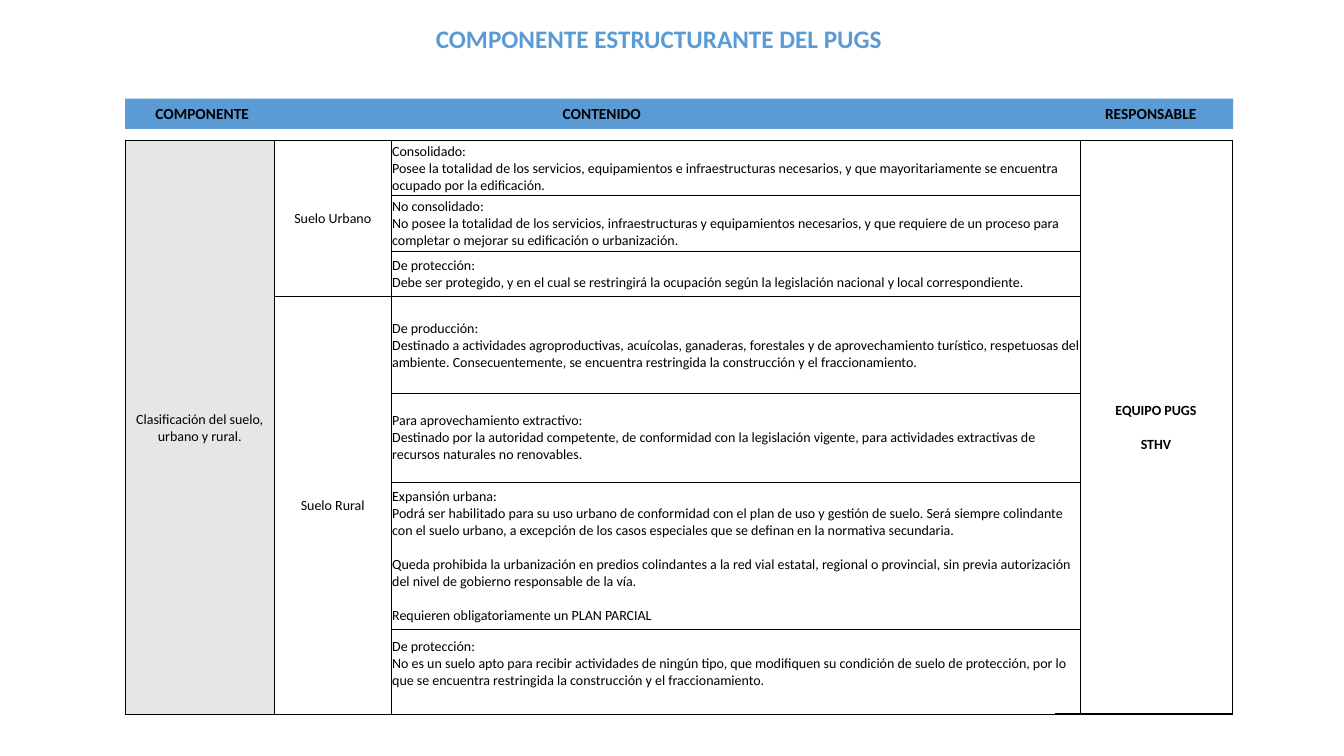
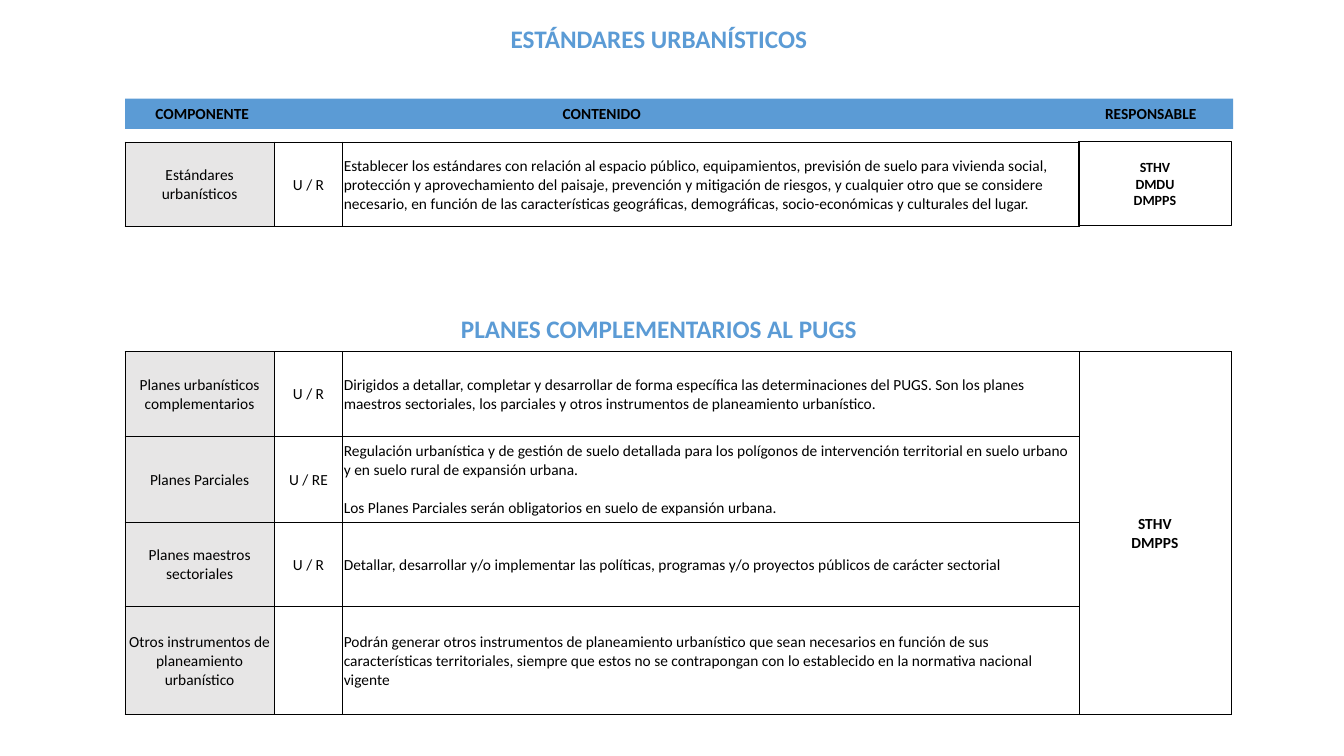
"""Builds two slides that set out the components of a land use plan."""
from lxml import etree
from pptx import Presentation
from pptx.dml.color import RGBColor
from pptx.enum.shapes import MSO_CONNECTOR, MSO_SHAPE
from pptx.enum.text import MSO_ANCHOR, PP_ALIGN
from pptx.oxml.ns import qn
from pptx.util import Inches, Pt

COLORS = {"blue": "5B9BD5", "grey": "E7E6E6", "black": "000000"}
FONT = "Calibri"
LEFT = 1.24
WIDTH = 10.99
LINE_HEIGHT = 1.22
HEADINGS = ("COMPONENTE", "CONTENIDO", "RESPONSABLE")
HEADING_TABS = (4.04, 9.42)
TEXT_COLUMN = 2
TEAM_COLUMN = 3

LAND_COLUMNS = (1.48, 1.16, 6.83, 1.51)
LAND_HEIGHTS = (0.55, 0.55, 0.45, 0.96, 0.88, 1.46, 0.85)
LAND_MERGES = ((0, 0, 6), (0, 1, 2), (3, 1, 6), (0, 3, 6))
LAND_ROWS = (
    ("Clasificación del suelo, urbano y rural.", "Suelo Urbano",
     "Consolidado:\nPosee la totalidad de los servicios, equipamientos e "
     "infraestructuras necesarios, y que mayoritariamente se encuentra "
     "ocupado por la edificación.", "EQUIPO PUGS\n\nSTHV"),
    ("", "",
     "No consolidado:\nNo posee la totalidad de los servicios, "
     "infraestructuras y equipamientos necesarios, y que requiere de un "
     "proceso para completar o mejorar su edificación o urbanización.", ""),
    ("", "",
     "De protección:\nDebe ser protegido, y en el cual se restringirá la "
     "ocupación según la legislación nacional y local correspondiente.", ""),
    ("", "Suelo Rural",
     "De producción:\nDestinado a actividades agroproductivas, acuícolas, "
     "ganaderas, forestales y de aprovechamiento turístico, respetuosas del "
     "ambiente. Consecuentemente, se encuentra restringida la construcción y "
     "el fraccionamiento.", ""),
    ("", "",
     "Para aprovechamiento extractivo:\nDestinado por la autoridad "
     "competente, de conformidad con la legislación vigente, para "
     "actividades extractivas de recursos naturales no renovables.", ""),
    ("", "",
     "Expansión urbana:\nPodrá ser habilitado para su uso urbano de "
     "conformidad con el plan de uso y gestión de suelo. Será siempre "
     "colindante con el suelo urbano, a excepción de los casos especiales "
     "que se definan en la normativa secundaria.\n\nQueda prohibida la "
     "urbanización en predios colindantes a la red vial estatal, regional o "
     "provincial, sin previa autorización del nivel de gobierno responsable "
     "de la vía.\n\nRequieren obligatoriamente un PLAN PARCIAL", ""),
    ("", "",
     "De protección:\nNo es un suelo apto para recibir actividades de ningún "
     "tipo, que modifiquen su condición de suelo de protección, por lo que "
     "se encuentra restringida la construcción y el fraccionamiento.", ""),
)

PLAN_COLUMNS = (1.48, 0.68, 7.3, 1.51)
PLAN_HEIGHTS = (0.84, 0.85, 0.84, 1.07)
PLAN_MERGES = ((0, 3, 3),)
PLAN_ROWS = (
    ("Planes urbanísticos complementarios", "U / R",
     "Dirigidos a detallar, completar y desarrollar de forma específica las "
     "determinaciones del PUGS. Son los planes maestros sectoriales, los "
     "parciales y otros instrumentos de planeamiento urbanístico.",
     "STHV\nDMPPS"),
    ("Planes Parciales", "U / RE",
     "Regulación urbanística y de gestión de suelo detallada para los "
     "polígonos de intervención territorial en suelo urbano y en suelo rural "
     "de expansión urbana.\n\nLos Planes Parciales serán obligatorios en "
     "suelo de expansión urbana.", ""),
    ("Planes maestros sectoriales", "U / R",
     "Detallar, desarrollar y/o implementar las políticas, programas y/o "
     "proyectos públicos de carácter sectorial", ""),
    ("Otros instrumentos de planeamiento urbanístico", "",
     "Podrán generar otros instrumentos de planeamiento urbanístico que sean "
     "necesarios en función de sus características territoriales, siempre "
     "que estos no se contrapongan con lo establecido en la normativa "
     "nacional vigente", ""),
)
STANDARD_ROWS = (
    ("Estándares urbanísticos", "U / R",
     "Establecer los estándares con relación al espacio público, "
     "equipamientos, previsión de suelo para vivienda social, protección y "
     "aprovechamiento del paisaje, prevención y mitigación de riesgos, y "
     "cualquier otro que se considere necesario, en función de las "
     "características geográficas, demográficas, socio-económicas y "
     "culturales del lugar."),
)


def color(name):
    """Return a named colour."""
    return RGBColor.from_string(COLORS[name])


def write(frame, text, size, bold=False, align=PP_ALIGN.CENTER, ink="black"):
    """Write text by lines, turning each empty line into paragraph spacing."""
    blocks = [block.split("\n") for block in text.split("\n\n")]
    frame.text = "\n".join(line for block in blocks for line in block)
    starts = {sum(map(len, blocks[:i])) for i in range(1, len(blocks))}
    for number, paragraph in enumerate(frame.paragraphs):
        paragraph.alignment = align
        if number in starts:
            paragraph.space_before = Pt(round(size * LINE_HEIGHT, 1))
        for font in [paragraph.font] + [span.font for span in paragraph.runs]:
            font.name = FONT
            font.size = Pt(size)
            font.bold = bold
            font.color.rgb = color(ink)


def add_title(page, text, top=0.18):
    """Add a centred blue title."""
    box = page.shapes.add_textbox(Inches(1.54), Inches(top), Inches(9.99), Inches(0.4))
    box.text_frame.word_wrap = True
    write(box.text_frame, text, 18, bold=True, ink="blue")


def add_box(page, left, top, width, height, fill=None):
    """Add a rectangle, either filled or outlined in black."""
    box = page.shapes.add_shape(MSO_SHAPE.RECTANGLE, Inches(left), Inches(top),
                                Inches(width), Inches(height))
    box.shadow.inherit = False
    box.text_frame.vertical_anchor = MSO_ANCHOR.MIDDLE
    if fill:
        box.fill.solid()
        box.fill.fore_color.rgb = color(fill)
        box.line.fill.background()
    else:
        box.fill.background()
        box.line.color.rgb = color("black")
        box.line.width = Pt(0.75)
    return box


def add_heading_band(page):
    """Add the blue band with the column headings at tab stops."""
    frame = add_box(page, LEFT, 0.98, WIDTH, 0.3, "blue").text_frame
    frame.margin_left = Inches(0.3)
    frame.margin_right = 0
    frame.margin_top = Inches(0.04)
    frame.margin_bottom = Inches(0.06)
    write(frame, "\t".join(HEADINGS), 11, bold=True, align=PP_ALIGN.LEFT)
    properties = frame.paragraphs[0]._p.get_or_add_pPr()
    stops = etree.SubElement(properties, qn("a:tabLst"))
    for position in HEADING_TABS:
        etree.SubElement(stops, qn("a:tab"), pos=str(Inches(position)), algn="l")


def add_base_line(page):
    """Add the line that closes the column of those responsible."""
    line = page.shapes.add_connector(MSO_CONNECTOR.STRAIGHT, Inches(12.23),
                                     Inches(7.08), Inches(10.46), Inches(7.08))
    line.line.color.rgb = color("black")
    line.line.width = Pt(0.5)
    etree.SubElement(line._element.spPr, qn("a:effectLst"))


def set_borders(cell, widths):
    """Draw the left, right, top and bottom borders of a cell."""
    properties = cell._tc.get_or_add_tcPr()
    for side, width in zip("LRTB", widths):
        border = etree.SubElement(properties, qn(f"a:ln{side}"), w=str(Pt(width)))
        fill = etree.SubElement(border, qn("a:solidFill"))
        etree.SubElement(fill, qn("a:srgbClr"), val=COLORS["black"])


def format_cell(cell, text, column, size):
    """Set the text and margins of a cell according to its column."""
    cell.margin_left = cell.margin_right = cell.margin_top = Inches(0.01)
    cell.margin_bottom = 0
    cell.vertical_anchor = MSO_ANCHOR.MIDDLE
    cell.fill.background()
    align = PP_ALIGN.LEFT if column == TEXT_COLUMN else PP_ALIGN.CENTER
    write(cell.text_frame, text, size, column == TEAM_COLUMN, align)


def add_grid(page, top, columns, heights, rows, size, merges=()):
    """Add a bordered table; merges give first row, column and last row."""
    add_box(page, LEFT, top, columns[0], sum(heights), "grey")
    table = page.shapes.add_table(
        len(heights), len(columns), Inches(LEFT), Inches(top),
        Inches(sum(columns)), Inches(sum(heights))).table
    table.first_row = table.horz_banding = False
    for column, width in zip(table.columns, columns):
        column.width = Inches(width)
    for row, height in zip(table.rows, heights):
        row.height = Inches(height)
    for first, column, last in merges:
        table.cell(first, column).merge(table.cell(last, column))
    for row, texts in enumerate(rows):
        for column, text in enumerate(texts):
            cell = table.cell(row, column)
            span = cell.span_height if cell.is_merge_origin else 1
            edges = (False, False, row == 0, row + span == len(heights))
            set_borders(cell, [1 if edge else 0.5 for edge in edges])
            format_cell(cell, text, column, size)
    return table


def add_team_box(page, text):
    """Add the outlined box naming those responsible for the standards."""
    box = add_box(page, LEFT + sum(PLAN_COLUMNS[:TEAM_COLUMN]), 1.4,
                  PLAN_COLUMNS[TEAM_COLUMN], PLAN_HEIGHTS[0])
    write(box.text_frame, text, 10, bold=True)


def add_page(deck, title):
    """Add a blank slide with the shared title and heading band."""
    page = deck.slides.add_slide(deck.slide_layouts[6])
    add_title(page, title)
    add_heading_band(page)
    return page


def main():
    """Build and save the deck."""
    deck = Presentation()
    deck.slide_width = Inches(13.33)
    deck.slide_height = Inches(7.5)

    page = add_page(deck, "COMPONENTE ESTRUCTURANTE DEL PUGS")
    land = add_grid(page, 1.39, LAND_COLUMNS, LAND_HEIGHTS, LAND_ROWS, 10, LAND_MERGES)
    land.cell(len(LAND_ROWS) - 1, TEXT_COLUMN).margin_bottom = Inches(0.17)
    add_base_line(page)

    page = add_page(deck, "ESTÁNDARES URBANÍSTICOS")
    add_grid(page, 1.41, PLAN_COLUMNS[:TEAM_COLUMN], PLAN_HEIGHTS[:1], STANDARD_ROWS, 11)
    add_team_box(page, "STHV\nDMDU\nDMPPS")
    add_title(page, "PLANES COMPLEMENTARIOS AL PUGS", 3.06)
    add_grid(page, 3.49, PLAN_COLUMNS, PLAN_HEIGHTS, PLAN_ROWS, 11, PLAN_MERGES)

    deck.save("out.pptx")


if __name__ == "__main__":
    main()
